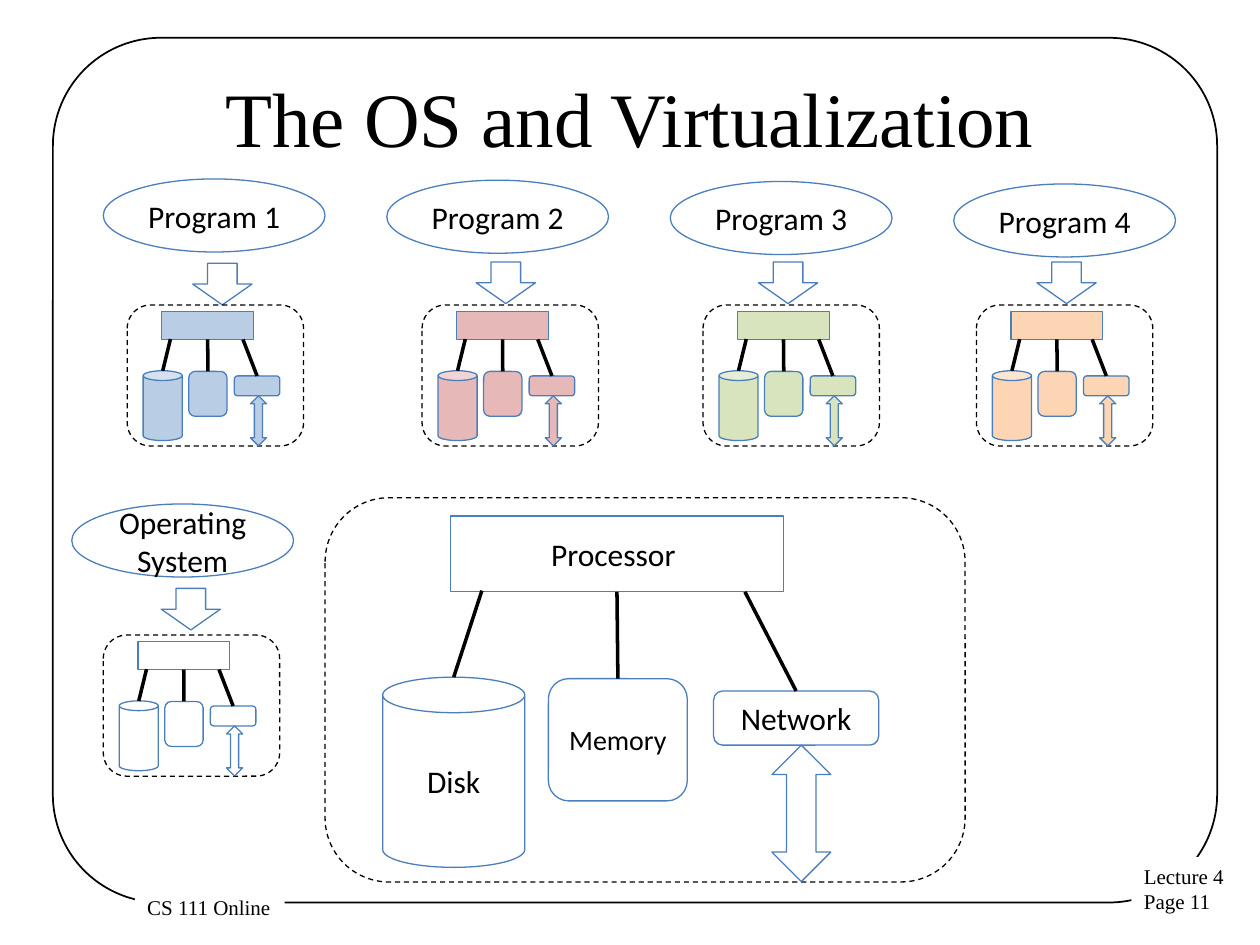
from typing import NamedTuple

from lxml.etree import SubElement
from pptx import Presentation
from pptx.dml.color import RGBColor
from pptx.enum.dml import MSO_LINE
from pptx.enum.shapes import MSO_CONNECTOR, MSO_SHAPE
from pptx.enum.text import MSO_ANCHOR, PP_ALIGN
from pptx.oxml.ns import qn
from pptx.util import Inches, Pt

BLACK, WHITE, BLUE = "000000", "FFFFFF", "4B7EBC"
SANS, SERIF = "Calibri", "Times New Roman"


class Box(NamedTuple):
    """A rectangle in inches."""
    x: float
    y: float
    w: float
    h: float

    def point(self, x, y):
        """Return the point at percentages x and y of this box."""
        return self.x + self.w * x / 100, self.y + self.h * y / 100

    def inner(self, x, y, w, h):
        """Return the inner box given as percentages of this box."""
        return Box(*self.point(x, y), self.w * w / 100, self.h * h / 100)

    def emu(self):
        """Return the four lengths in slide units."""
        return [Inches(v) for v in self]


def color(value):
    """Turn a hex string into a colour."""
    return RGBColor.from_string(value)


def write(tf, text, size, font, align=PP_ALIGN.CENTER):
    """Fill a text frame with evenly formatted black text."""
    tf.text = text
    for p in tf.paragraphs:
        p.alignment = align
        for r in p.runs:
            r.font.size, r.font.name = Pt(size), font
            r.font.color.rgb = color(BLACK)


def add_shape(shapes, kind, box, fill=None, line=BLUE, text="", size=18):
    """Add a preset shape with an optional fill and centred label."""
    sp = shapes.add_shape(kind, *box.emu())
    sp.shadow.inherit = False
    if fill:
        sp.fill.solid()
        sp.fill.fore_color.rgb = color(fill)
    else:
        sp.fill.background()
    sp.line.color.rgb = color(line)
    sp.line.width = Pt(0.75)
    if text:
        tf = sp.text_frame
        tf.word_wrap, tf.vertical_anchor = True, MSO_ANCHOR.MIDDLE
        write(tf, text, size, SANS)
    return sp


def add_link(shapes, start, end):
    """Add a thick black straight connector between two points."""
    cx = shapes.add_connector(MSO_CONNECTOR.STRAIGHT, *(Inches(v) for v in start + end))
    cx.line.color.rgb, cx.line.width = color(BLACK), Pt(2)
    SubElement(cx._element.spPr, qn("a:effectLst"))
    return cx


def add_machine(s, box, core=None, devices=None, labels=("", "", "", "")):
    """Draw a processor linked to disk, memory and network inside a dashed box."""
    shapes = s.shapes.add_group_shape().shapes
    processor, memory, disk, network = labels
    cpu = add_shape(shapes, MSO_SHAPE.RECTANGLE, box.inner(19.6, 4.8, 52, 19.7), core, text=processor)
    ram = add_shape(shapes, MSO_SHAPE.ROUNDED_RECTANGLE, box.inner(34.9, 47.1, 21.7, 31.8),
                    core, text=memory, size=16)
    border = add_shape(shapes, MSO_SHAPE.ROUNDED_RECTANGLE, box, line=BLACK)
    border.line.dash_style = MSO_LINE.DASH
    add_shape(shapes, MSO_SHAPE.CAN, box.inner(9, 46.7, 22.2, 49.5), devices, text=disk)
    net = add_shape(shapes, MSO_SHAPE.ROUNDED_RECTANGLE, box.inner(60.7, 50.3, 25.8, 14.1),
                    devices, text=network)
    add_shape(shapes, MSO_SHAPE.UP_DOWN_ARROW, box.inner(69.8, 64.4, 9.2, 35.5), devices)
    add_link(shapes, box.point(24.5, 24.2), box.point(20.1, 46.7))
    bus = add_link(shapes, box.point(45.6, 24.5), box.point(45.8, 47.1))
    bus.begin_connect(cpu, 2)
    bus.end_connect(ram, 0)
    add_link(shapes, box.point(65.6, 24.5), box.point(73.6, 50.3)).end_connect(net, 0)


def add_program(s, name, fill, oval, arrow, machine):
    """Draw a program, its down arrow and its virtual machine at three corners."""
    add_shape(s.shapes, MSO_SHAPE.OVAL, Box(*oval, 1.76, 0.58), text=name)
    add_shape(s.shapes, MSO_SHAPE.DOWN_ARROW, Box(*arrow, 0.47, 0.33), WHITE)
    add_machine(s, Box(*machine, 1.4, 1.12), fill, fill)


def add_footer(s, box, text):
    """Add a white footer label that interrupts the frame."""
    tb = s.shapes.add_textbox(*box.emu())
    tb.fill.solid()
    tb.fill.fore_color.rgb = color(WHITE)
    tb.text_frame.word_wrap = False
    write(tb.text_frame, text, 12, SERIF, PP_ALIGN.LEFT)


def add_frame(s, box, title):
    """Draw the rounded page frame, the footers and the title."""
    frame = add_shape(s.shapes, MSO_SHAPE.ROUNDED_RECTANGLE, box.inner(4.2, 4, 92.4, 91.5), line=BLACK)
    frame.adjustments[0] = 0.125
    frame.line.width = Pt(1)
    add_footer(s, box.inner(89.8, 90.7, 8.5, 6.8), "Lecture 4\nPage 11")
    add_footer(s, box.inner(10.7, 94, 11.9, 4), "CS 111 Online")
    sp = s.shapes.title
    sp.left, sp.top, sp.width, sp.height = box.inner(5, 4, 90, 16.67).emu()
    sp.text_frame.vertical_anchor = MSO_ANCHOR.MIDDLE
    write(sp.text_frame, title, 44, SERIF)


def main():
    """Build and save the slide."""
    prs = Presentation()
    page = Box(0, 0, 10, 7.5)
    prs.slide_width, prs.slide_height = Inches(page.w), Inches(page.h)
    s = prs.slides.add_slide(prs.slide_layouts[5])
    add_frame(s, page, "The OS and Virtualization")
    add_machine(s, Box(2.58, 3.95, 5.08, 3.05), None, WHITE,
                ("Processor ", "Memory ", "Disk", "Network"))
    programs = [
        ("Program 1", "B9CDE5", (0.82, 1.42), (1.53, 2.09), (1.01, 2.42)),
        ("Program 2", "E6B9B8", (3.07, 1.43), (3.78, 2.08), (3.35, 2.42)),
        ("Program 3", "D7E4BD", (5.32, 1.44), (6.02, 2.08), (5.58, 2.42)),
        ("Program 4", "FCD5B5", (7.57, 1.46), (8.23, 2.08), (7.75, 2.42)),
        ("Operating System", None, (0.57, 4), (1.28, 4.67), (0.82, 5.04)),
    ]
    for program in programs:
        add_program(s, *program)
    prs.save("out.pptx")


if __name__ == "__main__":
    main()
